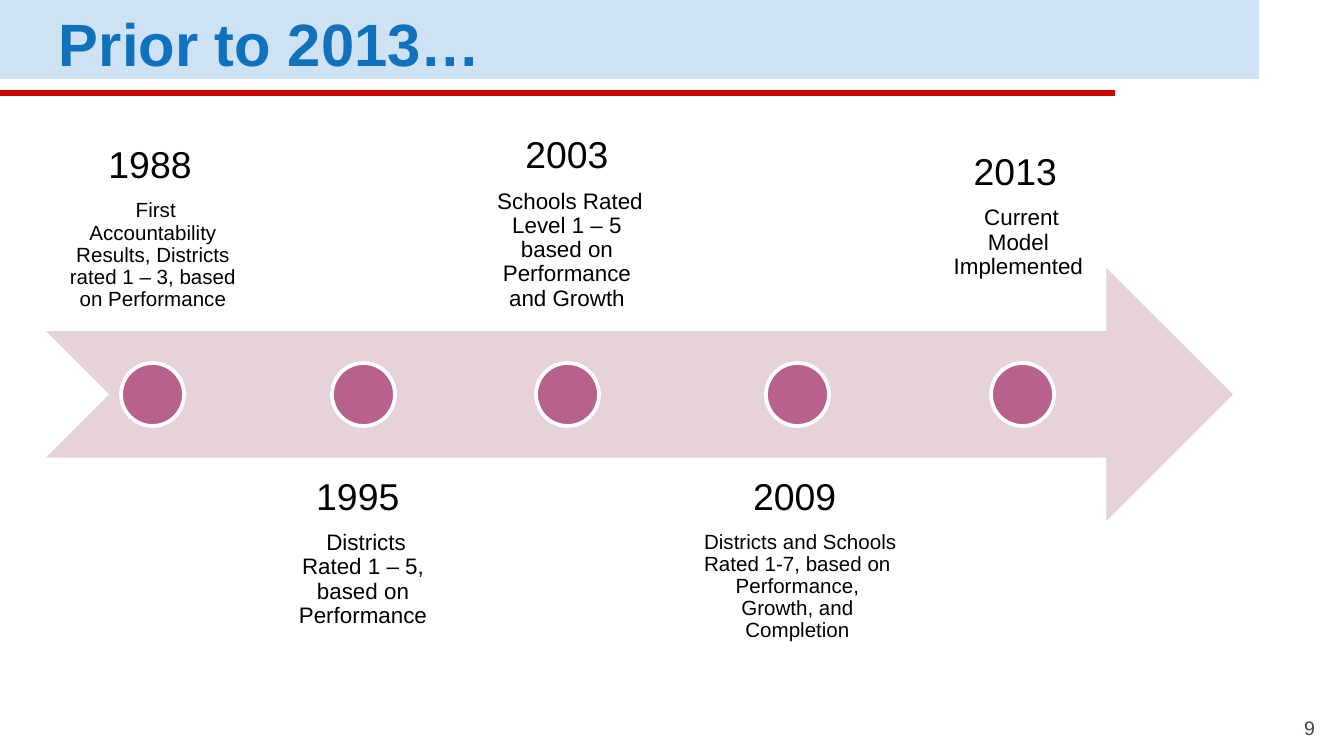
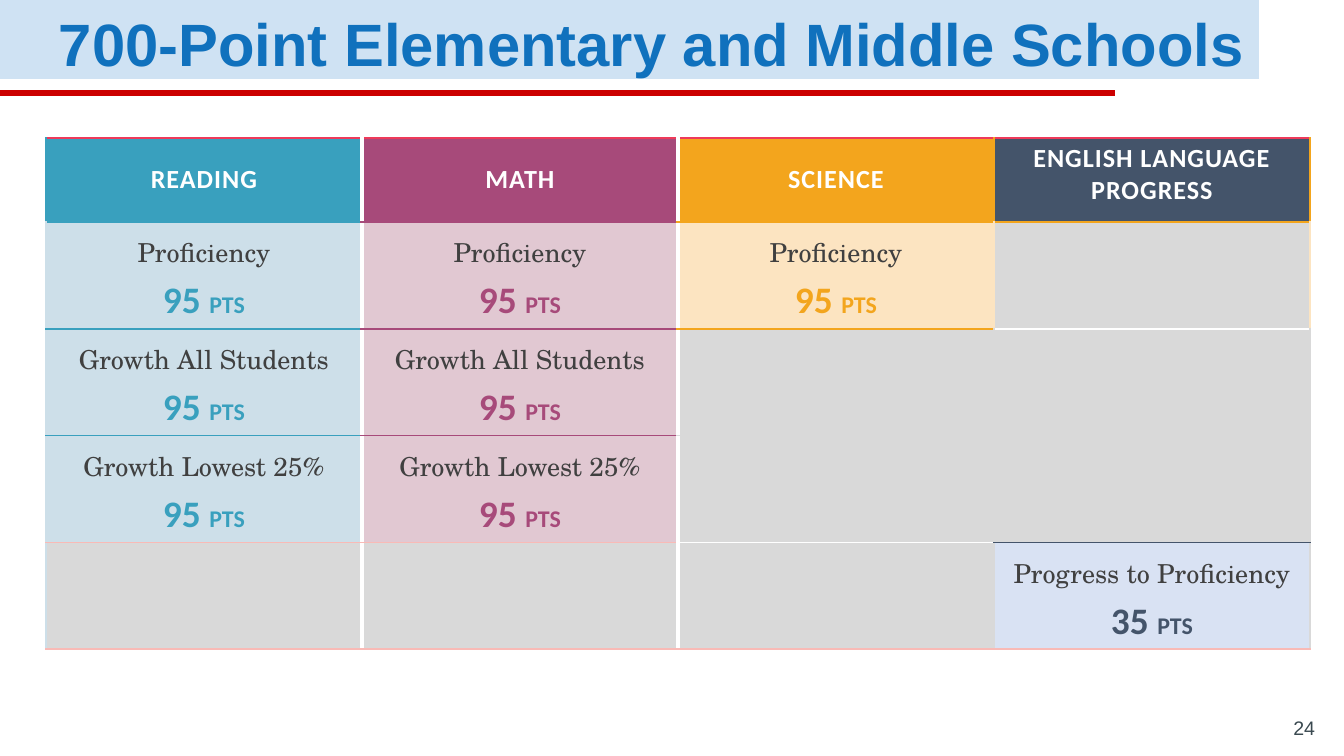
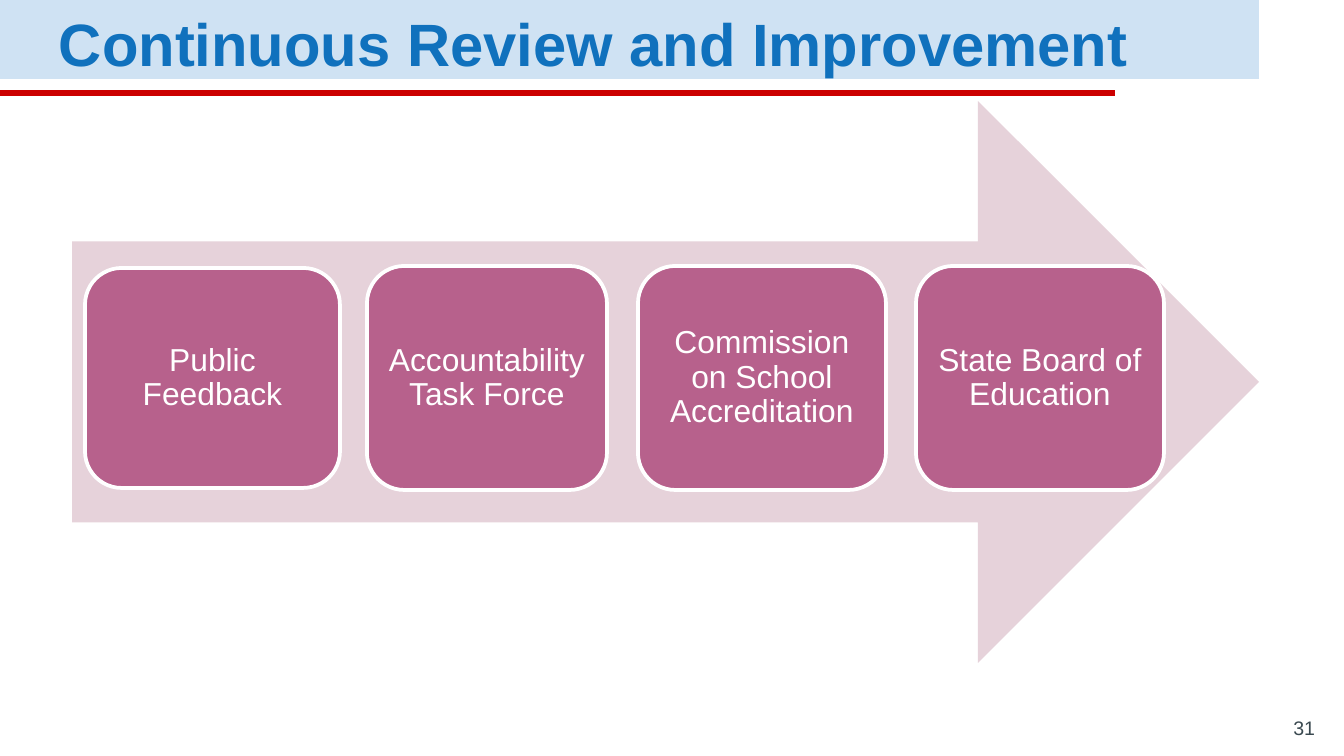
from dataclasses import dataclass
from lxml import etree
from pptx import Presentation
from pptx import util as u
from pptx.dml.color import RGBColor
from pptx.enum import shapes, text
from pptx.oxml.ns import qn

PX = 9144000 / 1344

WHITE = RGBColor(0xFF, 0xFF, 0xFF)
BLACK = RGBColor(0x00, 0x00, 0x00)
BAND = RGBColor(0xCF, 0xE2, 0xF3)
RED = RGBColor(0xCC, 0x00, 0x00)
TITLE_BLUE = RGBColor(0x10, 0x71, 0xBD)
NUMBER_GREY = RGBColor(0x3A, 0x49, 0x50)
ARROW_PINK = RGBColor(0xE6, 0xD2, 0xDA)
PLUM = RGBColor(0xB7, 0x61, 0x8C)
TEAL = RGBColor(0x39, 0xA0, 0xBE)
PALE_TEAL = RGBColor(0xCD, 0xDF, 0xE9)
MAGENTA = RGBColor(0xA7, 0x4A, 0x7A)
PALE_MAGENTA = RGBColor(0xE1, 0xC8, 0xD2)
AMBER = RGBColor(0xF3, 0xA5, 0x1D)
PALE_AMBER = RGBColor(0xFC, 0xE4, 0xC1)
SLATE = RGBColor(0x44, 0x54, 0x6A)
PALE_SLATE = RGBColor(0xD9, 0xE2, 0xF3)
GREY = RGBColor(0xD9, 0xD9, 0xD9)
CHARCOAL = RGBColor(0x40, 0x40, 0x40)
CRIMSON = RGBColor(0xEE, 0x3A, 0x5A)
SALMON = RGBColor(0xF9, 0xBA, 0xB6)

SHAPE = shapes.MSO_SHAPE
ALIGN = text.PP_ALIGN
ANCHOR = text.MSO_ANCHOR


def px(length):
    return u.Emu(round(length * PX))


@dataclass
class Run:
    words: str
    size: float
    color: RGBColor = BLACK
    bold: bool = False
    font: str = "Arial"
    cap: str = ""
    tracking: int = 0


class Deck:
    def __init__(self):
        self.prs = Presentation()
        self.prs.slide_width, self.prs.slide_height = px(1344), px(756)
        self.layout = self.prs.slide_layouts[5]
        self.slide = None

    def start(self, title, number):
        first = self.slide is None
        self.slide = self.prs.slides.add_slide(self.layout)
        if first:
            self.add_bands()
        heading = self.slide.shapes.title
        heading.left, heading.top, heading.width, heading.height = map(px, (46, 4, 1214, 66))
        self.set_text(heading.text_frame, [[Run(title, 32, TITLE_BLUE, True)]], 13,
                      align=ALIGN.LEFT, spacing=1.15)
        self.label((1247, 718, 81, 35), [[Run(str(number), 10.5, NUMBER_GREY)]], 13,
                   anchor=ANCHOR.BOTTOM, align=ALIGN.RIGHT)

    def add_bands(self):
        bands = [((0, 0, 1259, 79), BAND), ((0, 90, 1115, 6), RED)]
        for index, (box, color) in enumerate(bands):
            band = self.shape(SHAPE.RECTANGLE, box, color)
            self.layout.shapes.element.insert(2 + index, band.element)

    def shape(self, kind, box, fill, outline=None):
        shape = self.slide.shapes.add_shape(kind, *map(px, box))
        shape.shadow.inherit = False
        shape.fill.solid()
        shape.fill.fore_color.rgb = fill
        if outline is None:
            shape.line.fill.background()
        else:
            shape.line.color.rgb = outline
            shape.line.width = u.Pt(2)
        return shape

    def label(self, box, paragraphs, inset, **style):
        holder = self.slide.shapes.add_textbox(*map(px, box))
        self.set_text(holder.text_frame, paragraphs, inset, **style)

    def set_text(self, frame, paragraphs, inset, anchor=ANCHOR.MIDDLE, **style):
        frame.word_wrap = True
        frame.auto_size = text.MSO_AUTO_SIZE.NONE
        frame.vertical_anchor = anchor
        frame.margin_left = frame.margin_top = px(inset)
        frame.margin_right = frame.margin_bottom = px(inset)
        self.fill_text(frame, paragraphs, **style)

    def fill_text(self, frame, paragraphs, align=ALIGN.CENTER, spacing=1.0, gap=0):
        for index, runs in enumerate(paragraphs):
            paragraph = frame.add_paragraph() if index else frame.paragraphs[0]
            paragraph.alignment = align
            paragraph.line_spacing = spacing
            paragraph.space_before = u.Pt(0)
            paragraph.space_after = u.Pt(gap if index < len(paragraphs) - 1 else 0)
            for part in runs:
                self.add_run(paragraph, part)

    def add_run(self, paragraph, part):
        run = paragraph.add_run()
        run.text = part.words
        run.font.size = u.Pt(part.size)
        run.font.name = part.font
        run.font.bold = part.bold
        run.font.color.rgb = part.color
        properties = run._r.get_or_add_rPr()
        if part.cap:
            properties.set("cap", part.cap)
        if part.tracking:
            properties.set("spc", str(part.tracking))

    def table(self, left, top, column_width, row_heights, columns):
        frame = self.slide.shapes.add_table(
            len(row_heights), columns, px(left), px(top),
            px(column_width * columns), px(sum(row_heights)))
        table = frame.table
        table.first_row = table.horz_banding = False
        for column in table.columns:
            column.width = px(column_width)
        for row, height in zip(table.rows, row_heights):
            row.height = px(height)
        return table

    def cell(self, cell, fill, borders, paragraphs, anchor=ANCHOR.MIDDLE, spacing=1.0):
        cell.margin_left = cell.margin_right = px(10)
        cell.margin_top = cell.margin_bottom = px(5)
        cell.vertical_anchor = anchor
        properties = cell._tc.get_or_add_tcPr()
        for side, (color, width) in zip("LRTB", borders):
            line = etree.SubElement(properties, qn(f"a:ln{side}"), w=str(u.Pt(width)))
            solid = etree.SubElement(line, qn("a:solidFill"))
            etree.SubElement(solid, qn("a:srgbClr"), val=str(color))
        cell.fill.solid()
        cell.fill.fore_color.rgb = fill
        self.fill_text(cell.text_frame, paragraphs, spacing=spacing)


def timeline(deck):
    deck.start("Prior to 2013…", 9)
    deck.shape(SHAPE.NOTCHED_RIGHT_ARROW, (46, 268, 1187, 253), ARROW_PINK)
    above, below = ANCHOR.BOTTOM, ANCHOR.TOP
    milestones = [
        ("1988", " ", 11, " First Accountability Results, Districts rated 1 – 3, based on Performance",
         (46, 79, 214, 253), above, 121),
        ("1995 ", "", 12, " Districts Rated 1 – 5, based on Performance",
         (267, 457, 192, 253), below, 332),
        ("2003", "", 12, " Schools Rated Level 1 – 5 based on Performance and Growth",
         (466, 79, 202, 253), above, 536),
        ("2009", " ", 11, " Districts and Schools Rated 1-7, based on Performance, Growth, and Completion",
         (676, 457, 243, 253), below, 766),
        ("2013", " ", 12, " Current Model Implemented",
         (925, 148, 187, 152), above, 991),
    ]
    for year, tail, size, event, box, anchor, dot_left in milestones:
        heading = [Run(year, 20)] + ([Run(tail, size)] if tail else [])
        deck.label(box, [heading, [Run(event, size)]], 21, anchor=anchor, spacing=0.9, gap=7)
        deck.shape(SHAPE.OVAL, (dot_left, 363, 63, 63), PLUM, WHITE)


def points_table(deck):
    deck.start("700-Point Elementary and Middle Schools", 24)
    subjects = [
        ("READING", TEAL, PALE_TEAL),
        ("MATH", MAGENTA, PALE_MAGENTA),
        ("SCIENCE", AMBER, PALE_AMBER),
        ("ENGLISH LANGUAGE PROGRESS", SLATE, PALE_SLATE),
    ]
    measures = [
        ("Proficiency", 95, (0, 1, 2)),
        ("Growth All Students", 95, (0, 1)),
        ("Growth Lowest 25%", 95, (0, 1)),
        ("Progress to Proficiency", 35, (3,)),
    ]
    rules = [
        [CRIMSON] * 4,
        [TEAL, MAGENTA, AMBER, AMBER],
        [TEAL, MAGENTA, AMBER, WHITE],
        [TEAL, MAGENTA, GREY, GREY],
        [SALMON, SALMON, WHITE, SLATE],
        [SALMON] * 4,
    ]
    outer_edges = [TEAL] + [PALE_TEAL] * 4
    inner_edges = [AMBER, PALE_AMBER] + [GREY] * 3
    table = deck.table(46, 138, 316, [84] + [89] * 4, len(subjects))

    for row, (outer, inner) in enumerate(zip(outer_edges, inner_edges)):
        edges = [(outer, 1), (WHITE, 2.25), (WHITE, 2.25), (inner, 1), (inner, 1)]
        for column, (subject, dark, pale) in enumerate(subjects):
            borders = [edges[column], edges[column + 1],
                       (rules[row][column], 1), (rules[row + 1][column], 1)]
            cell = table.cell(row, column)
            if row == 0:
                anchor = ANCHOR.TOP if column == 3 else ANCHOR.MIDDLE
                header = Run(subject, 14, WHITE, True, "Calibri", tracking=50)
                deck.cell(cell, dark, borders, [[header]], anchor)
                continue
            measure, points, scored = measures[row - 1]
            if column in scored:
                score = [Run(f"{points} ", 20, dark, True, "Calibri"),
                         Run("pts", 16, dark, True, "Calibri", cap="small")]
                caption = [Run(measure, 14, CHARCOAL, font="TeX Gyre Schola")]
                deck.cell(cell, pale, borders, [caption, score], spacing=1.15)
            else:
                deck.cell(cell, GREY, borders, [])


def review_process(deck):
    deck.start("Continuous Review and Improvement", 31)
    deck.shape(SHAPE.RIGHT_ARROW, (72, 101, 1187, 562), ARROW_PINK)
    reviewers = [
        ("Public Feedback", (85, 268, 255, 220)),
        ("Accountability Task Force", (367, 266, 240, 224)),
        ("Commission on School Accreditation", (638, 266, 248, 224)),
        ("State Board of Education", (916, 266, 248, 224)),
    ]
    for reviewer, box in reviewers:
        step = deck.shape(SHAPE.ROUNDED_RECTANGLE, box, PLUM, WHITE)
        deck.set_text(step.text_frame, [[Run(reviewer, 17, WHITE)]], 9, spacing=0.9)


def main():
    deck = Deck()
    timeline(deck)
    points_table(deck)
    review_process(deck)
    deck.prs.save("out.pptx")


if __name__ == "__main__":
    main()
